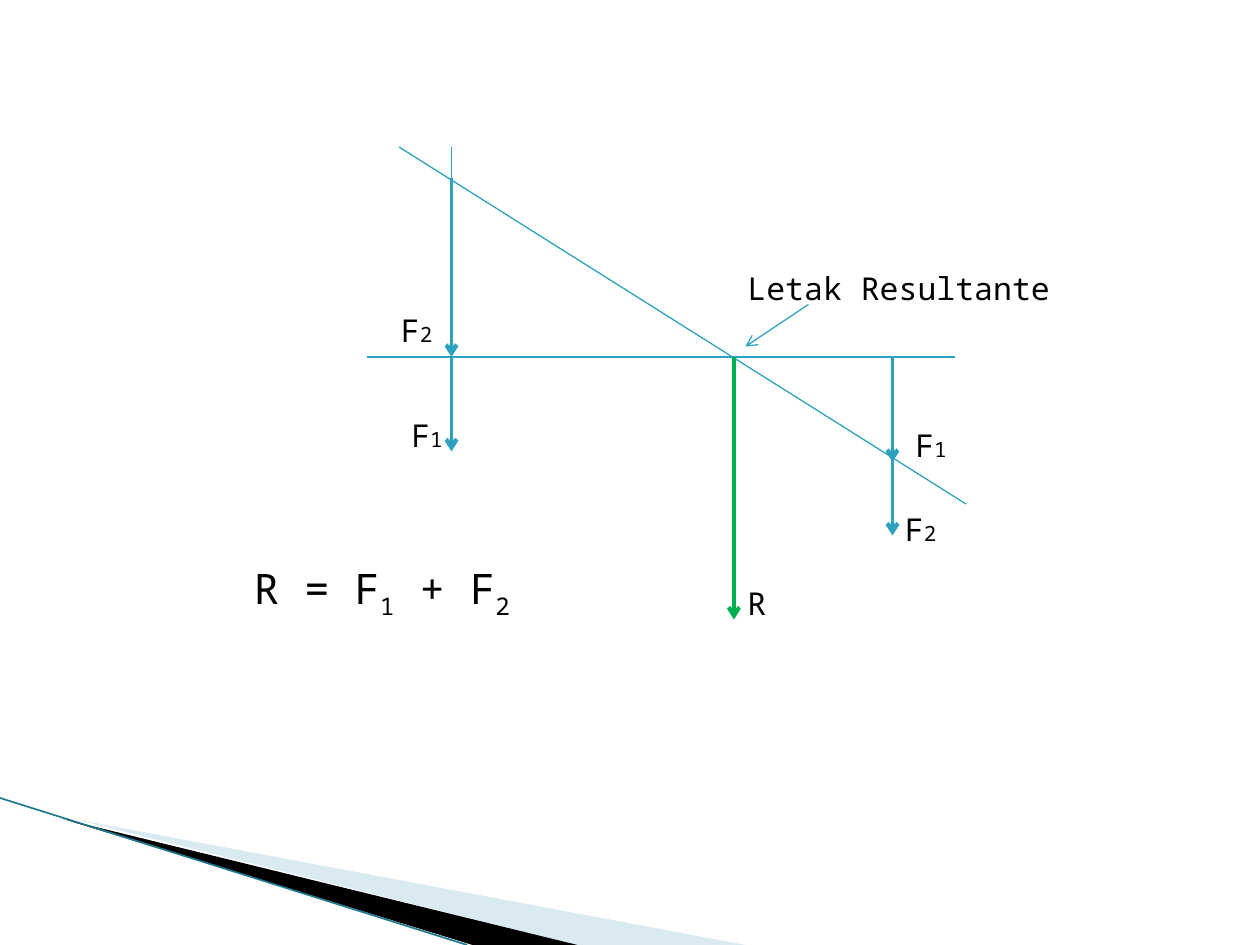
from lxml.etree import SubElement
from pptx import Presentation
from pptx.dml.color import RGBColor
from pptx.enum.shapes import MSO_CONNECTOR as CONN
from pptx.enum.text import MSO_AUTO_SIZE as AUTO
from pptx.oxml.ns import qn
from pptx.util import Inches, Pt

TEAL, GREEN, BLACK = "2DA2BF", "00B050", "000000"
FONT = "Noto Sans Mono"

prs = Presentation()
prs.slide_width, prs.slide_height = Inches(10), Inches(7.5)
s = prs.slides.add_slide(prs.slide_layouts[6])
U = prs.slide_width / 120  # grid of 120 columns by 90 rows


def rgb(code):
    return RGBColor.from_string(code)


def add_line(x1, y1, x2, y2, color=TEAL, width=0.75, arrow=False):
    c = s.shapes.add_connector(CONN.STRAIGHT, *(round(v * U) for v in (x1, y1, x2, y2)))
    c.line.color.rgb, c.line.width = rgb(color), Pt(width)
    if arrow:
        SubElement(c.line._get_or_add_ln(), qn("a:tailEnd"), type="arrow")
    SubElement(c._element.spPr, qn("a:effectLst"))


# Corner wedges, in grid units
wedges = [
    ("A0CBDC", 40, [(6.6, 78), (71.4, 90), (54.7, 90)]),
    (BLACK, 100, [(6.4, 77.9), (54.8, 90), (44.6, 90)]),
]
for color, opacity, points in wedges:
    builder = s.shapes.build_freeform(*points[0], scale=U)
    builder.add_line_segments(points[1:], close=True)
    sp = builder.convert_to_shape()
    sp.shadow.inherit = False
    sp.line.fill.background()
    sp.fill.solid()
    sp.fill.fore_color.rgb = rgb(color)
    if opacity < 100:
        fill = sp._element.spPr.find(qn("a:solidFill"))
        SubElement(fill[0], qn("a:alpha"), val=str(opacity * 1000))
add_line(0, 76, 44.5, 90, "1F7A90", 0.95)

# Construction lines: beam, left vertical, diagonal
beam, left, right, mid = 34, 43, 85, 69.9
add_line(35, beam, 91, beam)
add_line(left, 35, left, 14)
add_line(38, 14, 92, 48)

# Force arrows and the resultant
for x, top, bottom, color in [
    (left, beam, 43, TEAL),
    (left, 17, beam, TEAL),
    (right, beam, 51, TEAL),
    (right, 35, 44, TEAL),
    (mid, beam, 59, GREEN),
]:
    add_line(x, top, x, bottom, color, 2.25, arrow=True)

# Pointer from the caption to the resultant
add_line(77, 29, 71, 33, arrow=True)

# Labels: left, top, width, height, then runs of (text, size, is subscript)
F1 = [("F", 18, False), ("1", 12, False)]
F2 = [("F", 18, False), ("2", 12, False)]
SUM = [("R = F", 24, False), ("1", 24, True), (" + F", 24, False), ("2", 24, True)]
labels = [
    (38, 39, 6, 4.8, F1),
    (85, 48, 6, 4.8, F2),
    (37, 29, 6, 4.8, F2),
    (86, 40, 6, 4.8, F1),
    (70, 55, 6, 4.8, [("R", 18, False)]),
    (70, 25, 34, 4.8, [("Letak Resultante", 18, False)]),
    (23, 53, 30, 6, SUM),
]
for *box, runs in labels:
    tf = s.shapes.add_textbox(*(round(v * U) for v in box)).text_frame
    tf.word_wrap = True
    tf.auto_size = AUTO.SHAPE_TO_FIT_TEXT
    p = tf.paragraphs[0]
    for text, size, subscript in runs:
        r = p.add_run()
        r.text = text
        r.font.name, r.font.size = FONT, Pt(size)
        r.font.color.rgb = rgb(BLACK)
        if subscript:
            r.font._element.set("baseline", "-25000")

prs.save("out.pptx")
